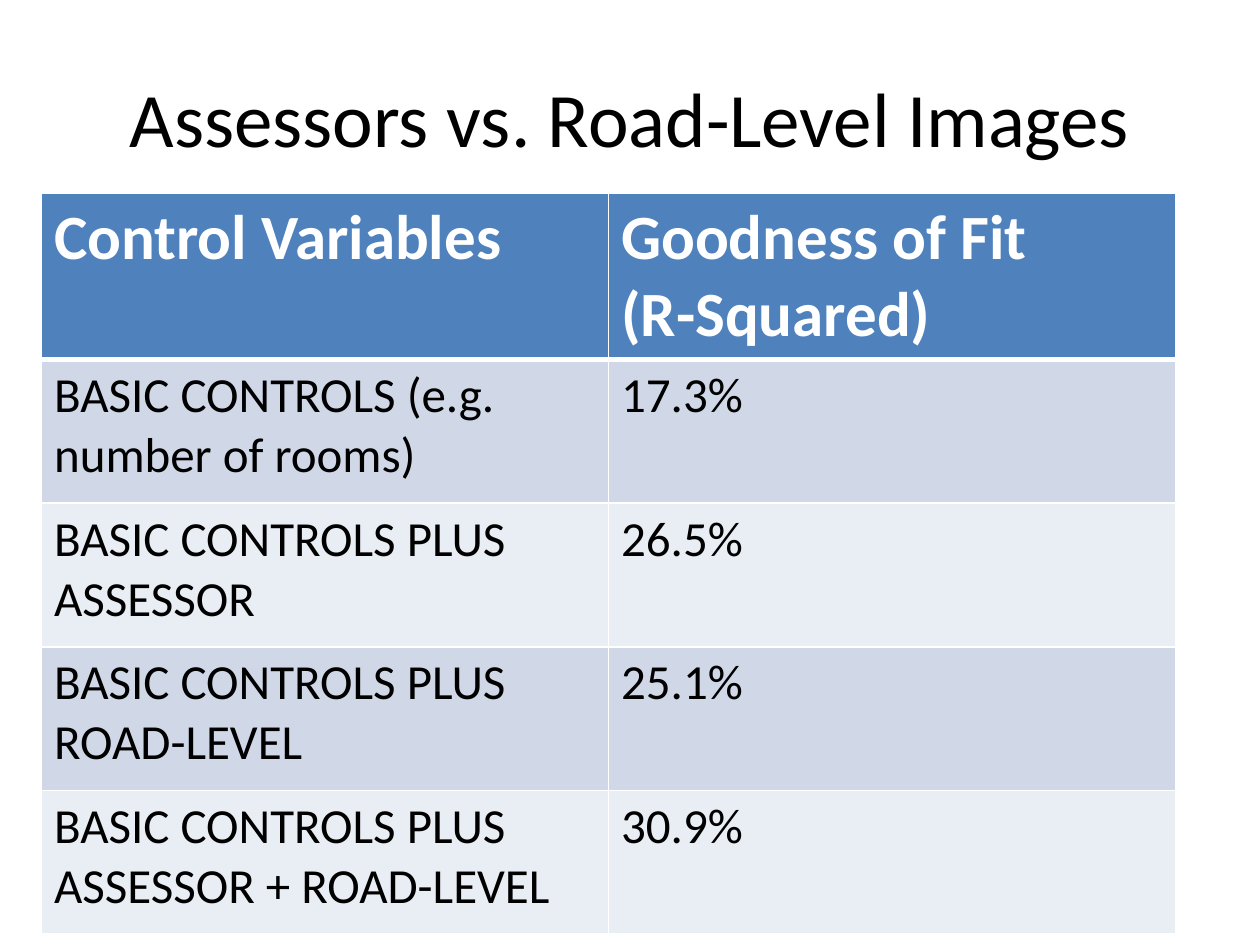
from lxml.etree import SubElement
from pptx import Presentation
from pptx.dml.color import RGBColor
from pptx.enum.text import MSO_ANCHOR, PP_ALIGN
from pptx.oxml.ns import qn
from pptx.util import Inches, Pt

ROWS = [
    ("Control Variables", "Goodness of Fit\n(R-Squared)"),
    ("BASIC CONTROLS (e.g. number of rooms)", "17.3%"),
    ("BASIC CONTROLS PLUS ASSESSOR", "26.5%"),
    ("BASIC CONTROLS PLUS ROAD-LEVEL", "25.1%"),
    ("BASIC CONTROLS PLUS ASSESSOR + ROAD-LEVEL", "30.9%"),
]
HEADER_FILL = "4F81BD"
BAND_FILLS = ["E9EDF4", "D0D8E8"]


def add_text(para, text, size, color, bold=False):
    span = para.add_run()
    span.text = text
    span.font.name = "Calibri"
    span.font.size = Pt(size)
    span.font.bold = bold
    span.font.color.rgb = RGBColor.from_string(color)


def add_border(cell, side, points):
    """Draw a white line on one side (L, R, T or B) of a cell."""
    line = SubElement(cell._tc.get_or_add_tcPr(), qn(f"a:ln{side}"), w=str(Pt(points)))
    fill = SubElement(line, qn("a:solidFill"))
    SubElement(fill, qn("a:srgbClr"), val="FFFFFF")


deck = Presentation()
deck.slide_width, deck.slide_height = Inches(10), Inches(7.5)
page = deck.slides.add_slide(deck.slide_layouts[5])

title = page.shapes.title
title.left, title.top = Inches(0.5), Inches(0.3)
title.width, title.height = Inches(9), Inches(1.25)
title.text_frame.vertical_anchor = MSO_ANCHOR.MIDDLE
title_para = title.text_frame.paragraphs[0]
title_para.alignment = PP_ALIGN.CENTER
add_text(title_para, "Assessors vs. Road-Level Images", 44, "000000")

table = page.shapes.add_table(
    len(ROWS), 2, Inches(0.33), Inches(1.53), Inches(9), Inches(1.14 * len(ROWS))
).table

for row_index, row in enumerate(ROWS):
    is_header = row_index == 0
    fill_color = HEADER_FILL if is_header else BAND_FILLS[row_index % 2]
    for column_index, text in enumerate(row):
        cell = table.cell(row_index, column_index)
        for side in "LRTB":
            # The rule between header and body is heavier than the grid.
            heavy = (row_index, side) in [(0, "B"), (1, "T")]
            add_border(cell, side, 3 if heavy else 1)
        cell.fill.solid()
        cell.fill.fore_color.rgb = RGBColor.from_string(fill_color)
        for line_index, line_text in enumerate(text.split("\n")):
            frame = cell.text_frame
            para = frame.add_paragraph() if line_index else frame.paragraphs[0]
            if is_header:
                add_text(para, line_text, 36, "FFFFFF", bold=True)
            else:
                add_text(para, line_text, 28, "000000")

deck.save("out.pptx")
